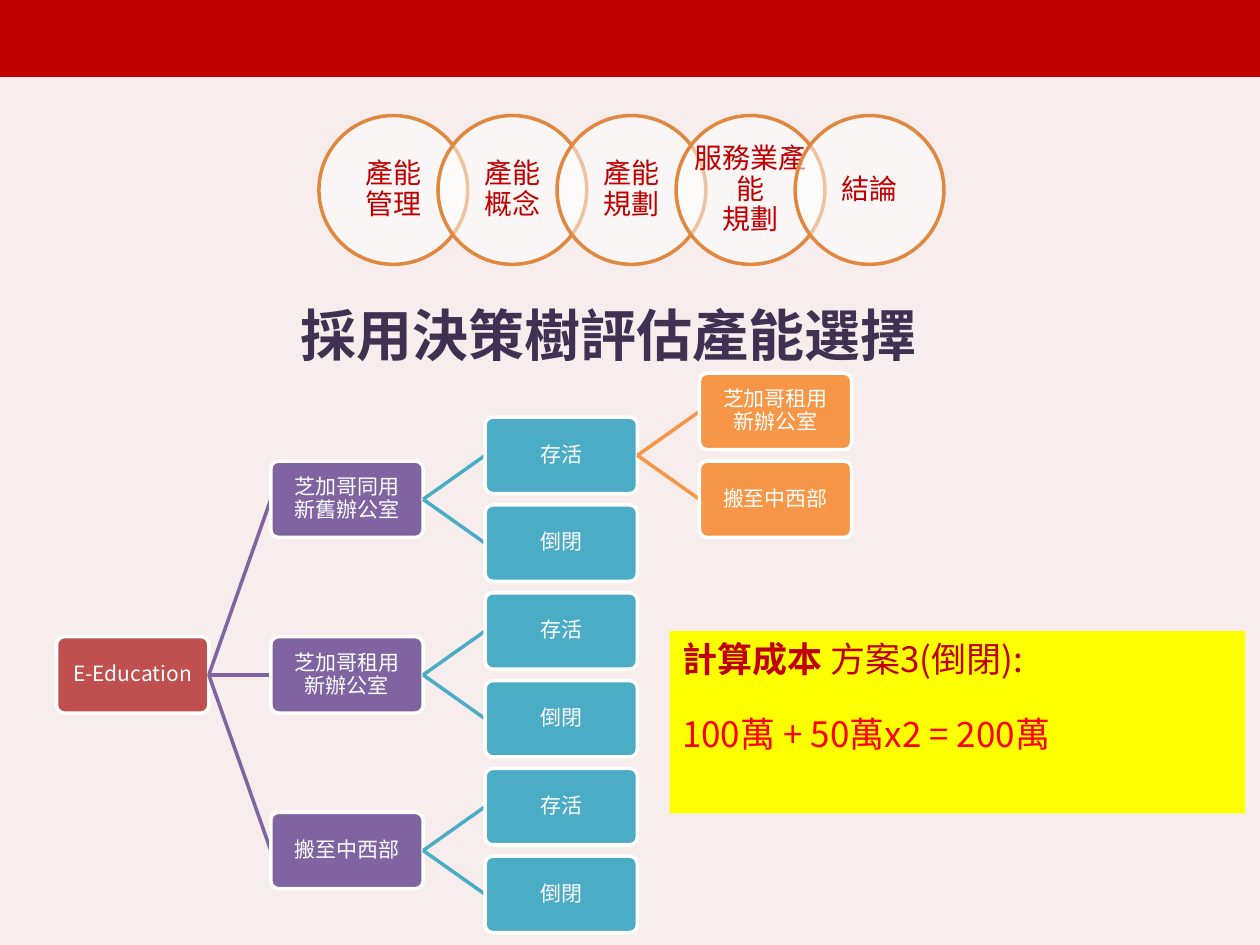
from lxml.etree import SubElement as Sub
from pptx import Presentation
from pptx.dml.color import RGBColor as RGB
from pptx.enum.shapes import MSO_CONNECTOR as Link, MSO_SHAPE as Kind
from pptx.enum.text import MSO_ANCHOR as Anchor, PP_ALIGN as Align
from pptx.oxml.ns import qn
from pptx.util import Cm, Pt

FONT = "Noto Sans CJK SC"
PINK = RGB(0xF8, 0xED, 0xED)
RED = RGB(0xC0, 0x00, 0x00)
BRIGHT = RGB(0xFF, 0x00, 0x00)
WHITE = RGB(0xFF, 0xFF, 0xFF)
AMBER = RGB(0xE0, 0x88, 0x40)
INK = RGB(0x40, 0x31, 0x52)
BRICK = RGB(0xC0, 0x50, 0x4D)
PURPLE = RGB(0x80, 0x64, 0xA2)
TEAL = RGB(0x4B, 0xAC, 0xC6)
ORANGE = RGB(0xF7, 0x96, 0x46)
YELLOW = RGB(0xFF, 0xFF, 0x00)


def write(para, text, size=12, color=WHITE, bold=False, align=Align.CENTER, space=0.9):
    para.alignment = align
    para.line_spacing = space
    old = len(para.runs)
    for num, line in enumerate(text.split("\n")):
        if num:
            para.add_line_break()
        para.add_run().text = line
    for run in para.runs[old:]:
        font = run.font
        font.size, font.bold, font.name = Pt(size), bold, FONT
        font.color.rgb = color
        Sub(run._r.get_or_add_rPr(), qn("a:ea"), typeface=FONT)


def draw(kind, left, top, width, height, fill, line=None, inset=0.03):
    shape = page.shapes.add_shape(kind, Cm(left), Cm(top), Cm(width), Cm(height))
    shape.shadow.inherit = False
    shape.fill.solid()
    shape.fill.fore_color.rgb = fill
    if line is None:
        shape.line.fill.background()
    else:
        shape.line.color.rgb = line
        shape.line.width = Pt(2)
    frame = shape.text_frame
    frame.word_wrap = True
    frame.vertical_anchor = Anchor.MIDDLE
    frame.margin_left = frame.margin_right = Cm(inset)
    frame.margin_top = frame.margin_bottom = Cm(inset)
    return shape


deck = Presentation()
deck.slide_width, deck.slide_height = Cm(25.4), Cm(19.05)
page = deck.slides.add_slide(deck.slide_layouts[6])
page.background.fill.solid()
page.background.fill.fore_color.rgb = PINK

title = page.shapes.add_textbox(Cm(5.8), Cm(5.94), Cm(13.2), Cm(1.9))
title.text_frame.word_wrap = True
write(title.text_frame.paragraphs[0], "採用決策樹評估產能選擇", size=32, color=INK,
      bold=True, align=Align.LEFT, space=1.0)

draw(Kind.RECTANGLE, 0, 0, 25.4, 1.52, RED, RED)

steps = ["產能\n管理", "產能\n概念", "產能\n規劃", "服務業產能\n規劃", "結論"]
for num, text in enumerate(steps):
    left = 6.43 + 2.4 * num
    ring = draw(Kind.OVAL, left, 2.33, 3, 3, WHITE, AMBER)
    tint = ring.element.spPr.find(".//" + qn("a:srgbClr"))
    Sub(tint, qn("a:alpha"), val="50000")
    label = page.shapes.add_textbox(Cm(left), Cm(2.33), Cm(3), Cm(3))
    frame = label.text_frame
    frame.word_wrap = True
    frame.vertical_anchor = Anchor.MIDDLE
    frame.margin_left = frame.margin_right = Cm(0.15)
    frame.margin_top = frame.margin_bottom = Cm(0.05)
    write(frame.paragraphs[0], text, size=16, color=RED)

SHADES = [BRICK, PURPLE, TEAL, ORANGE]
nodes = [
    ("root", None, 0, 2.5, "E-Education"),
    ("both", "root", 1, 0.5, "芝加哥同用\n新舊辦公室"),
    ("live", "both", 2, 0, "存活"),
    ("rent", "live", 3, -0.5, "芝加哥租用\n新辦公室"),
    ("move", "live", 3, 0.5, "搬至中西部"),
    ("fail", "both", 2, 1, "倒閉"),
    ("new", "root", 1, 2.5, "芝加哥租用\n新辦公室"),
    ("new live", "new", 2, 2, "存活"),
    ("new fail", "new", 2, 3, "倒閉"),
    ("west", "root", 1, 4.5, "搬至中西部"),
    ("west live", "west", 2, 4, "存活"),
    ("west fail", "west", 2, 5, "倒閉"),
]
boxes = {}
for name, head, col, row, text in nodes:
    if head:
        branch = page.shapes.add_connector(Link.STRAIGHT, 0, 0, 0, 0)
        branch.line.color.rgb = SHADES[col]
        branch.line.width = Pt(2)
        Sub(branch.element.spPr, qn("a:effectLst"))
    box = draw(Kind.ROUNDED_RECTANGLE, 1.14 + 4.32 * col, 8.41 + 1.77 * row,
               3.07, 1.54, SHADES[col], WHITE)
    box.adjustments[0] = 0.1
    write(box.text_frame.paragraphs[0], text)
    boxes[name] = box
    if head:
        branch.begin_connect(boxes[head], 3)
        branch.end_connect(box, 1)

note = draw(Kind.RECTANGLE, 13.5, 12.72, 11.6, 3.68, YELLOW, inset=0.25)
frame = note.text_frame
frame.margin_top = frame.margin_bottom = Cm(0.13)
frame.vertical_anchor = Anchor.TOP
style = dict(size=20, align=Align.LEFT, space=1.0)
first = frame.paragraphs[0]
write(first, "計算成本 ", color=RED, bold=True, **style)
write(first, "方案3(倒閉):", color=RED, **style)
last = frame.add_paragraph()
last.space_before = Pt(19)
write(last, "100萬 + 50萬x2 = 200萬", color=BRIGHT, **style)

deck.save("out.pptx")
